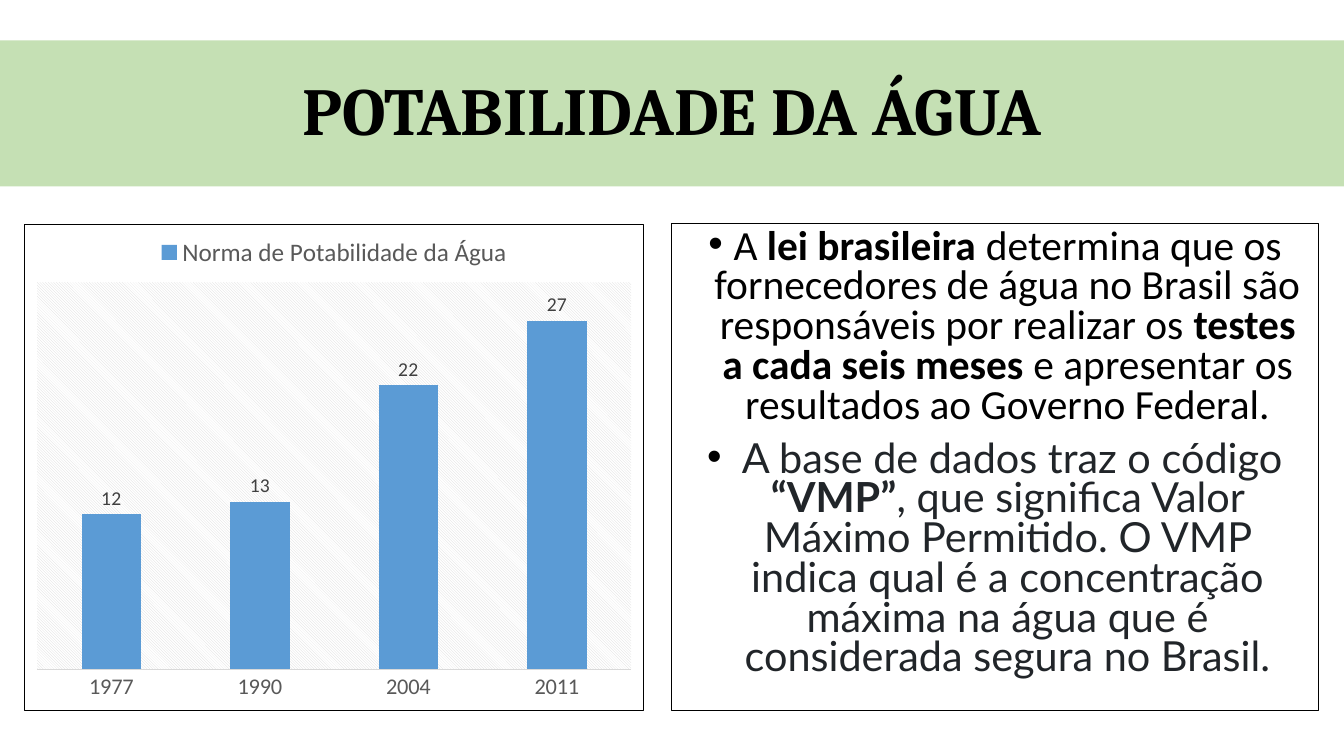
import pptx
import pptx.chart.data
import pptx.dml.color
import pptx.enum.chart
import pptx.enum.dml
import pptx.enum.text
import pptx.oxml
import pptx.oxml.ns
import pptx.util
import lxml.etree

Cm = pptx.util.Cm
Pt = pptx.util.Pt
CENTER = pptx.enum.text.PP_ALIGN.CENTER

COLORS = {
    "black": "000000", "white": "FFFFFF", "green": "C5E0B4", "ink": "212529",
    "blue": "5B9BD5", "gray": "595959", "dark": "404040", "pale": "D9D9D9",
}

LAW = [
    ("A ", "Calibri", "black", False),
    ("lei brasileira ", "Calibri", "black", True),
    ("determina que os fornecedores de água no Brasil são responsáveis "
     "por realizar os ", "Calibri", "black", False),
    ("testes a cada seis meses", "Calibri", "black", True),
    (" e apresentar os resultados ao Governo Federal.", "Calibri", "black", False),
]
LIMIT = [
    (" ", "Calibri", "black", False),
    ("A base de dados traz o código ", "Lato", "ink", False),
    ("“VMP”", "Lato", "ink", True),
    (", que significa Valor Máximo Permitido. O VMP indica qual é a "
     "concentração máxima na água que é considerada segura no Brasil.",
     "Lato", "ink", False),
]


def rgb(name):
    return pptx.dml.color.RGBColor.from_string(COLORS[name])


def style(font, size, color, face="Calibri", bold=False):
    font.size, font.name, font.bold = Pt(size), face, bold
    font.color.rgb = rgb(color)


def props(fill, line=""):
    """Make a chart spPr element from DrawingML fill and line markup."""
    space = pptx.oxml.ns.nsdecls("c", "a")
    return pptx.oxml.parse_xml(f"<c:spPr {space}>{fill}{line}</c:spPr>")


def solid(name):
    return f'<a:solidFill><a:srgbClr val="{COLORS[name]}"/></a:solidFill>'


class Deck:
    def __init__(self):
        self.show = pptx.Presentation()
        self.show.slide_width, self.show.slide_height = Cm(33.87), Cm(19.05)
        self.slide = self.show.slides.add_slide(self.show.slide_layouts[5])

    def title(self, text, left, top, width, height):
        shape = self.slide.shapes.title
        shape.left, shape.top = Cm(left), Cm(top)
        shape.width, shape.height = Cm(width), Cm(height)
        shape.fill.solid()
        shape.fill.fore_color.rgb = rgb("green")
        frame = shape.text_frame
        frame.text = text
        frame.vertical_anchor = pptx.enum.text.MSO_ANCHOR.MIDDLE
        para = frame.paragraphs[0]
        para.alignment, para.line_spacing = CENTER, 0.9
        style(para.runs[0].font, 48, "black", "Cambria", True)

    def bullets(self, items, left, top, width, height):
        box = self.slide.shapes.add_textbox(Cm(left), Cm(top), Cm(width), Cm(height))
        box.line.color.rgb, box.line.width = rgb("black"), Pt(0.75)
        frame = box.text_frame
        frame.word_wrap = True
        for i, item in enumerate(items):
            para = frame.add_paragraph() if i else frame.paragraphs[0]
            para.alignment, para.line_spacing = CENTER, 0.8
            para.space_before = Pt(10)
            for text, face, color, bold in item:
                run = para.add_run()
                run.text = text
                style(run.font, 29.6, color, face, bold)
            ppr = para._p.get_or_add_pPr()
            indent = Cm(0.635)
            ppr.set("marL", str(indent))
            ppr.set("indent", str(-indent))
            for tag, key, value in (("buFont", "typeface", "Arial"), ("buChar", "char", "•")):
                mark = lxml.etree.SubElement(ppr, pptx.oxml.ns.qn(f"a:{tag}"))
                mark.set(key, value)

    def columns(self, name, cats, vals, left, top, width, height):
        data = pptx.chart.data.CategoryChartData()
        data.categories = cats
        data.add_series(name, vals)
        chart = self.slide.shapes.add_chart(
            pptx.enum.chart.XL_CHART_TYPE.COLUMN_CLUSTERED,
            Cm(left), Cm(top), Cm(width), Cm(height), data).chart
        style(chart.font, 14, "black")
        chart.has_title = False
        chart.has_legend = True
        chart.legend.position = pptx.enum.chart.XL_LEGEND_POSITION.TOP
        chart.legend.include_in_layout = False
        style(chart.legend.font, 18, "gray")

        axis = chart.category_axis
        axis.major_tick_mark = pptx.enum.chart.XL_TICK_MARK.NONE
        axis.format.line.color.rgb, axis.format.line.width = rgb("pale"), Pt(0.75)
        style(axis.tick_labels.font, 16, "gray")
        scale = chart.value_axis
        scale.visible = scale.has_major_gridlines = False
        scale.minimum_scale, scale.maximum_scale = 0, 30

        plot = chart.plots[0]
        plot.gap_width, plot.overlap, plot.vary_by_categories = 150, -25, False
        bars = plot.series[0]
        bars.format.fill.solid()
        bars.format.fill.fore_color.rgb = rgb("blue")
        labels = bars.data_labels
        labels.show_value = True
        labels.position = pptx.enum.chart.XL_LABEL_POSITION.OUTSIDE_END
        style(labels.font, 14, "dark")

        root = chart._chartSpace
        hatch = (f'<a:pattFill prst="ltDnDiag"><a:fgClr><a:srgbClr val="{COLORS["pale"]}"/>'
                 f'</a:fgClr><a:bgClr><a:srgbClr val="{COLORS["white"]}"/></a:bgClr></a:pattFill>')
        root.chart.plotArea.append(props(hatch))
        edge = f'<a:ln w="{Pt(0.75)}">{solid("black")}</a:ln>'
        root.chart.addnext(props(solid("white"), edge))


def main():
    deck = Deck()
    deck.bullets([LAW, LIMIT], 16.93, 5.63, 16.3, 12.28)
    deck.title("POTABILIDADE DA ÁGUA", 0, 1.02, 33.87, 3.68)
    deck.columns("Norma de Potabilidade da Água", ["1977", "1990", "2004", "2011"],
                 [12, 13, 22, 27], 0.61, 5.65, 15.62, 12.26)
    deck.show.save("out.pptx")


if __name__ == "__main__":
    main()
